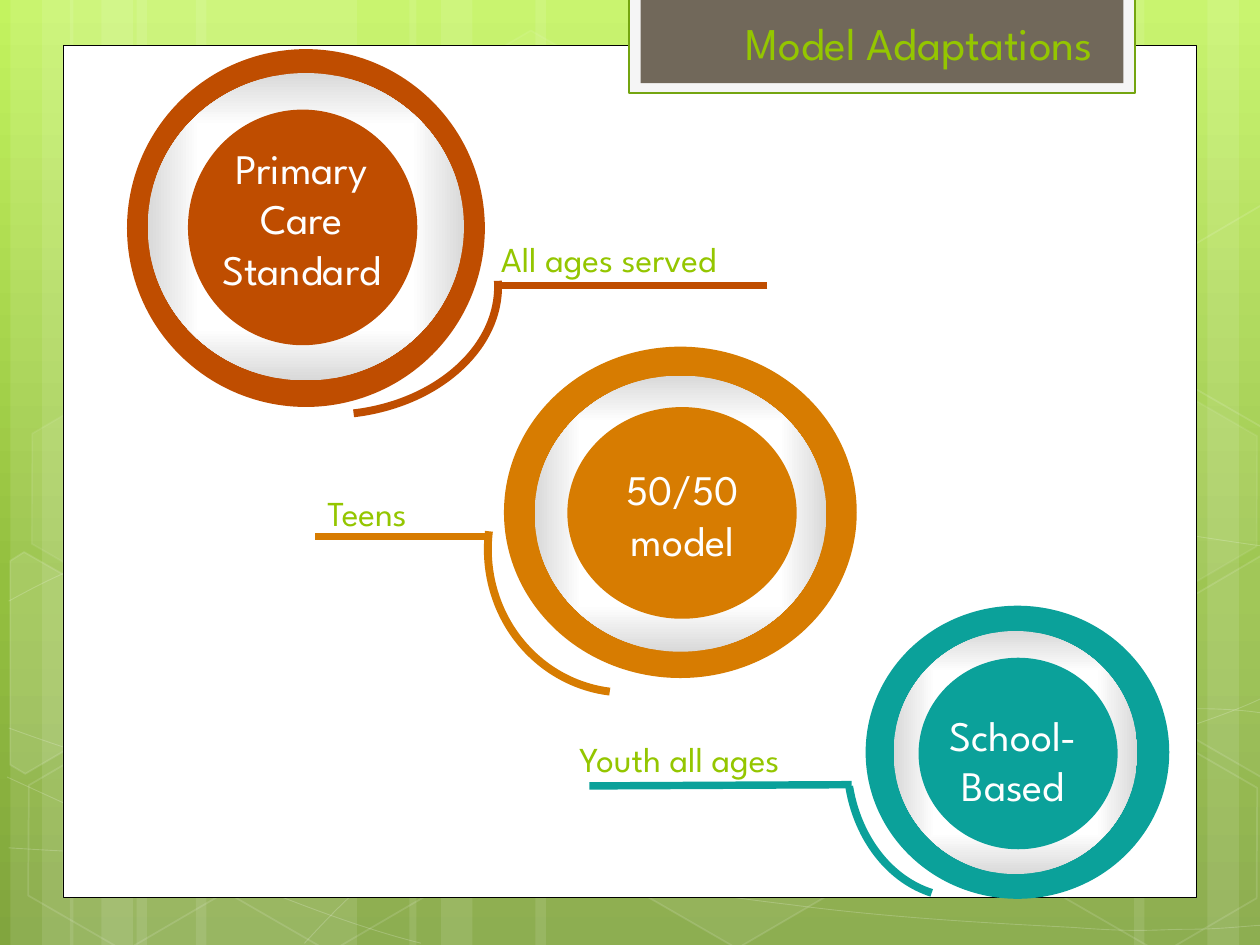
from dataclasses import dataclass
from math import cos, radians, sin

from lxml.etree import SubElement
from pptx import Presentation
from pptx.dml.color import RGBColor
from pptx.enum.shapes import MSO_CONNECTOR, MSO_SHAPE
from pptx.enum.text import MSO_ANCHOR, PP_ALIGN
from pptx.oxml import parse_xml
from pptx.oxml.ns import nsdecls, qn
from pptx.util import Pt

COLORS = {
    "white": "FFFFFF", "black": "000000", "tab_frame": "F5F5F5",
    "tab_border": "74A510", "tab": "71685A", "label": "94C600",
    "care": "BF4D00", "fifty": "D77C01", "school": "0BA19A",
}
PAGE_STOPS = [(0, "C3F35F"), (62, "93BF3F"), (100, "81A53E")]
RING_STOPS = [(0, "FFFFFF"), (66, "FFFFFF"), (100, "D9D9D9")]
LINEAR = '<a:lin ang="5400000" scaled="0"/>'
INWARD = ('<a:path path="shape"><a:fillToRect l="50000" t="50000" '
          'r="50000" b="50000"/></a:path>')

STRIPS = [(78, 126), (6, 36), (24, 60), (112, 126), (40, 36), (58, 60),
          (528, 126), (690, 36), (648, 60), (306, 222), (234, 36), (252, 60)]
WAVES = [
    [(5, 484.5), (44, 487), (83, 489), (137, 488), (191, 487), (258, 486),
     (330, 479), (402, 472), (504, 458), (570, 444), (636, 431), (703, 409),
     (725, 397)],
    [(5, 343.5), (26, 332), (47, 321), (87, 310), (128, 300), (186, 284),
     (250, 279), (314, 274), (392, 273), (471, 279), (550, 284), (682, 307),
     (725, 312.5)],
    [(4, 444), (91, 484), (178, 523.5), (240.5, 539)],
    [(5, 416), (27, 424), (50, 432), (92, 443.5), (134, 454), (197, 472),
     (257, 485), (317, 497), (392, 510), (452, 517), (512, 525), (576, 528),
     (614, 530), (652, 533), (662, 531), (680, 531), (699, 531), (712, 529),
     (725, 528.5)],
    [(174, 539), (187, 525), (200, 511), (217, 498), (235, 485), (259, 470),
     (279, 460), (300, 450), (312, 446), (338, 438), (364, 431), (413, 421),
     (438, 416), (463, 411), (467, 411), (490, 410), (512, 408), (547, 405),
     (572, 405), (597, 404), (638, 405), (638, 405), (654, 405), (670, 405),
     (686, 405), (699, 405), (711, 406), (718, 407), (725, 408), (722, 407),
     (724, 407.5)],
]
HEXAGONS = [(240.5, 26, 4, 8), (358, 424, 6, 12), (8, 425.5, 0, 12),
            (10, 224.5, 7, 8), (125.3, 426, 0, 12), (542.2, 326.2, 10, 12),
            (600.5, 427, 0, 12), (600.5, 226, 7, 8)]
LEFT_EDGE = [(5.8, 320.4), (13.7, 315.4), (69.1, 347), (68.4, 410.4),
             (14.4, 442.1), (5.8, 437)]
RIGHT_EDGE = [(666.7, 349.2), (720.7, 317.5), (726.5, 321.1), (726.5, 441.4),
              (721.4, 444.2), (666.7, 412.6)]
CUT_HEXAGONS = [(LEFT_EDGE, (25.9, 385.2), 10), (RIGHT_EDGE, (709.2, 374.4), 4),
                ([(x, y - 200.2) for x, y in RIGHT_EDGE], (709.2, 174.2), 0)]
MODELS = [
    dict(color="care", text="Primary Care\nStandard", text_box=(102.5, 77.76, 139.68, 94.32),
         discs=[(72.6, 28.08, 204.48, 204.48), (84.4, 41.76, 180.72, 175.68),
                (107.4, 62.64, 131.04, 134.64)],
         arc=(97.5, 95.76, 187.2, 141.12), rotation=176.4, angles=(165.196, 0),
         line=(438.48, 163.2, 282.24, 163.2), label="All ages served",
         label_at=(279.2, 128.3)),
    dict(color="school", text="School-Based", text_box=(512.8, 401.76, 132.48, 65.52),
         discs=[(494.64, 346.1, 173.52, 167.5), (510.6, 360.6, 139.4, 138.9),
                (524.9, 375.84, 113.76, 109.44)],
         arc=(470.4, 369.5, 156.96, 129.6), rotation=270, angles=(169.973, 208.665),
         line=(486.7, 448.4, 336.8, 449.1), label="Youth all ages",
         label_at=(324, 414)),
    dict(color="fifty", text="50/50\nmodel", text_box=(320.6, 261.5, 138.96, 65.52),
         discs=[(288, 198.1, 201.6, 189.36), (305.5, 214.6, 166.8, 157.8),
                (324.2, 232.6, 131.04, 120.96)],
         arc=(276, 232.5, 166.32, 160.56), rotation=281.9, angles=(165.196, 2.674),
         line=(277.2, 306.6, 180, 306.6), label="Teens", label_at=(180, 273.6)),
]


def turn(points, center, degrees):
    cosine, sine = cos(radians(degrees)), sin(radians(degrees))
    return [(center[0] + (x - center[0]) * cosine - (y - center[1]) * sine,
             center[1] + (x - center[0]) * sine + (y - center[1]) * cosine)
            for x, y in points]


def set_gradient(fill, element, stops, direction):
    fill.solid()
    solid = next(element.iter(qn("a:solidFill")))
    stop_xml = "".join(f'<a:gs pos="{position * 1000}"><a:srgbClr val="{color}"/></a:gs>'
                       for position, color in stops)
    gradient = parse_xml(f'<a:gradFill {nsdecls("a")} rotWithShape="1">'
                         f'<a:gsLst>{stop_xml}</a:gsLst>{direction}</a:gradFill>')
    solid.getparent().replace(solid, gradient)


def set_color(fill, color, opacity=100):
    fill.solid()
    fill.fore_color.rgb = RGBColor.from_string(COLORS[color])
    if opacity < 100:
        color_element = fill._xPr.find(qn("a:solidFill"))[0]
        SubElement(color_element, qn("a:alpha")).set("val", str(opacity * 1000))


@dataclass
class SlidePainter:
    """Holds the style and the slide being drawn."""
    slide: object
    font: str = "League Spartan"

    def finish(self, shape, fill=None, opacity=100, line=None, width=1, line_opacity=100):
        shape.shadow.inherit = False
        if fill and opacity:
            set_color(shape.fill, fill, opacity)
        else:
            shape.fill.background()
        if line:
            set_color(shape.line.fill, line, line_opacity)
            shape.line.width = Pt(width)
        else:
            shape.line.fill.background()
        return shape

    def preset(self, kind, box, **style):
        shape = self.slide.shapes.add_shape(kind, *map(Pt, box))
        return self.finish(shape, **style)

    def outline(self, points, closed, **style):
        points = [(Pt(x), Pt(y)) for x, y in points]
        builder = self.slide.shapes.build_freeform(*points[0])
        builder.add_line_segments(points[1:], close=closed)
        return self.finish(builder.convert_to_shape(), **style)

    def curve(self, points, **style):
        shape = self.outline(points, False, **style)
        segments = list(shape._element.iter(qn("a:lnTo")))
        for first in range(0, len(segments), 3):
            bezier = SubElement(segments[first].getparent(), qn("a:cubicBezTo"))
            for segment in segments[first:first + 3]:
                bezier.append(segment[0])
                segment.getparent().remove(segment)

    def ring(self, box):
        shape = self.preset(MSO_SHAPE.OVAL, box)
        set_gradient(shape.fill, shape._element, RING_STOPS, INWARD)

    def arc(self, box, rotation, angles, color):
        shape = self.preset(MSO_SHAPE.ARC, box, line=color, width=4.5)
        shape.adjustments[0], shape.adjustments[1] = angles
        shape.rotation = rotation
        shape._element.spPr.find(qn("a:xfrm")).set("flipH", "1")

    def line(self, ends, color):
        connector = self.slide.shapes.add_connector(MSO_CONNECTOR.STRAIGHT, *map(Pt, ends))
        set_color(connector.line.fill, color)
        connector.line.width = Pt(4.25)
        SubElement(connector._element.spPr, qn("a:effectLst"))

    def text(self, text, box, size, color, align=PP_ALIGN.LEFT,
             anchor=MSO_ANCHOR.TOP, inset=3.6):
        text_frame = self.slide.shapes.add_textbox(*map(Pt, box)).text_frame
        text_frame.word_wrap = True
        text_frame.vertical_anchor = anchor
        text_frame.margin_top = text_frame.margin_bottom = Pt(inset)
        text_frame.text = text
        for paragraph in text_frame.paragraphs:
            paragraph.alignment = align
            for run in paragraph.runs:
                run.font.name = self.font
                run.font.size = Pt(size)
                run.font.color.rgb = RGBColor.from_string(COLORS[color])


def main():
    presentation = Presentation()
    presentation.slide_width, presentation.slide_height = Pt(720), Pt(540)
    slide = presentation.slides.add_slide(presentation.slide_layouts[6])
    set_gradient(slide.background.fill, slide.element, PAGE_STOPS, LINEAR)
    painter = SlidePainter(slide)

    for left, width in STRIPS:
        painter.preset(MSO_SHAPE.RECTANGLE, (left, 0, width, 540), fill="white", opacity=10)
    for wave in WAVES:
        painter.curve(wave, line="white", width=0.5, line_opacity=20)
    for left, top, opacity, line_opacity in HEXAGONS:
        hexagon = painter.preset(MSO_SHAPE.HEXAGON, (left, top, 126, 109.5), fill="white",
                                 opacity=opacity, line="white", line_opacity=line_opacity)
        hexagon.adjustments[0] = 0.285
        hexagon.rotation = 30
    for points, center, opacity in CUT_HEXAGONS:
        hexagon = painter.outline(turn(points, center, -30), True, fill="white",
                                  opacity=opacity, line="white", line_opacity=12)
        hexagon.rotation = 30

    painter.preset(MSO_SHAPE.RECTANGLE, (36, 26, 648, 487), fill="white",
                   line="black", width=0.5)
    painter.preset(MSO_SHAPE.RECTANGLE, (359.2, -1.5, 289.5, 54.7), fill="tab_frame",
                   line="tab_border", width=1.25)
    painter.preset(MSO_SHAPE.RECTANGLE, (366, -1.5, 276, 49), fill="tab")
    painter.text("Model Adaptations", (366.3, 0, 265.5, 43.4), 25.9, "label",
                 PP_ALIGN.RIGHT, MSO_ANCHOR.BOTTOM)

    for model in MODELS:
        color = model["color"]
        outer, ring, core = model["discs"]
        painter.preset(MSO_SHAPE.OVAL, outer, fill=color)
        painter.ring(ring)
        painter.preset(MSO_SHAPE.OVAL, core, fill=color)
        painter.arc(model["arc"], model["rotation"], model["angles"], color)
        painter.line(model["line"], color)
        painter.text(model["text"], model["text_box"], 24, "white", PP_ALIGN.CENTER)
        painter.text(model["label"], (*model["label_at"], 211, 65.5), 20, "label", inset=7.2)

    presentation.save("out.pptx")


if __name__ == "__main__":
    main()
